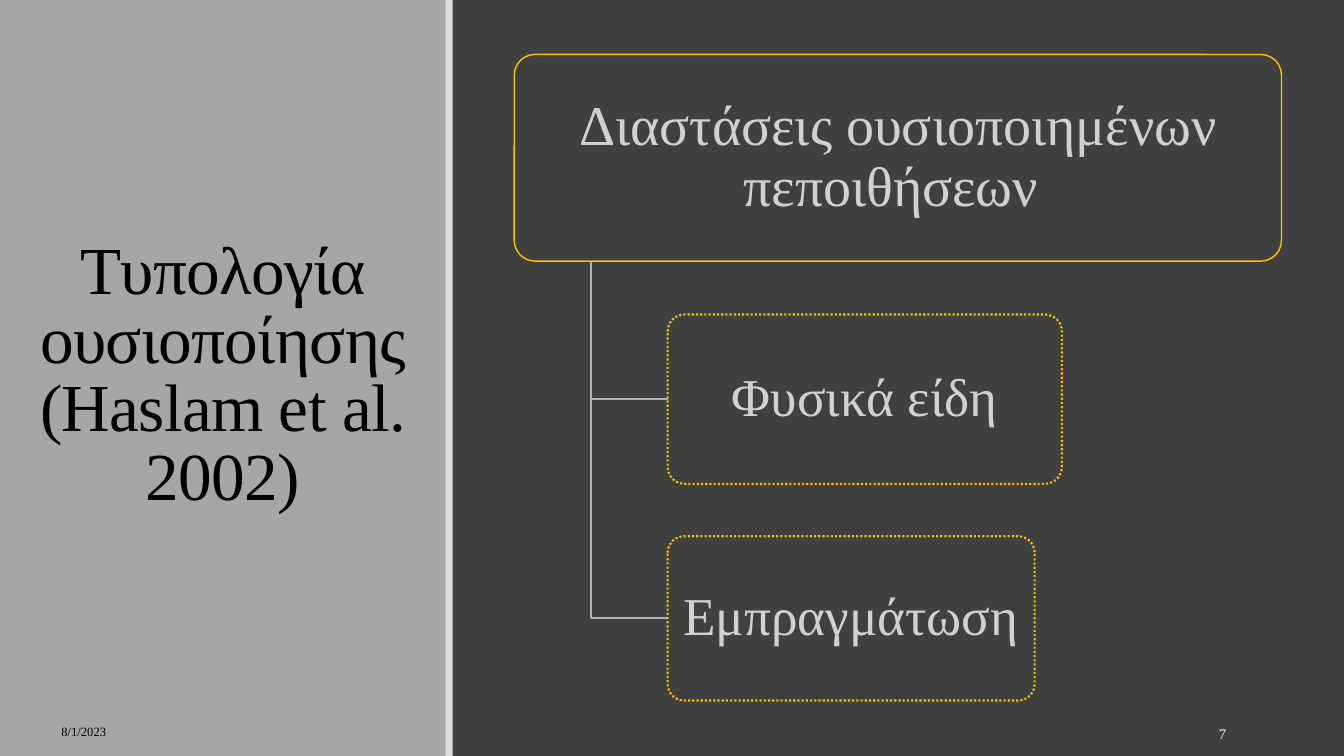
from lxml.etree import SubElement
from pptx import Presentation
from pptx.dml.color import RGBColor as Color
from pptx.enum.dml import MSO_LINE as Dash
from pptx.enum.shapes import MSO_SHAPE as Kind
from pptx.enum.text import MSO_ANCHOR as Anchor, MSO_AUTO_SIZE as Fit, PP_ALIGN as Align
from pptx.oxml.ns import qn
from pptx.util import Inches, Pt

TITLE = "Τυπολογία ουσιοποίησης (Haslam et al. 2002)"
TITLE_BOX = (0.15, 0.65, 4.12, 4.5)
PANELS = [  # box, colour
    ((0, 0, 4.43, 7.5), "panel"),
    ((4.42, 0, 0.07, 7.5), "strip"),
]
ROOT = ("Διαστάσεις ουσιοποιημένων πεποιθήσεων ", (5.1, 0.54, 7.61, 2.05))
LEAVES = [  # text, top, width, height
    ("Φυσικά είδη", 3.12, 3.91, 1.68),
    ("Εμπραγμάτωση", 5.32, 3.64, 1.63),
]
FOOTERS = [  # text, box, alignment, style
    ("8/1/2023", (0.51, 7.06, 2.86, 0.4), Align.LEFT, "date"),
    ("7", (10.83, 7.08, 1.43, 0.4), Align.RIGHT, "page"),
]
THEME = {
    "font": "Times New Roman",
    "back": "404040", "panel": "A6A6A6", "strip": "DDDDDD",
    "frame": "FFC000", "branch": "B1B1B1",
    "title": (48, "000000"), "root": (40, "D1D1D1"), "leaf": (38, "D1D1D1"),
    "date": (9, "000000"), "page": (10.5, "F8F8F8"),
}


def tint(name):
    return Color.from_string(THEME[name])


def apply(target, values):
    for name, value in values.items():
        setattr(target, name, value)


def write(shape, text, style, align=Align.CENTER, anchor=Anchor.MIDDLE,
          spacing=None, pad=(0.1, 0.05)):
    """Fill a shape with one styled paragraph; pad is (side, top) in inches."""
    side, top = map(Inches, pad)
    frame = shape.text_frame
    apply(frame, dict(word_wrap=True, auto_size=Fit.NONE, vertical_anchor=anchor,
                      margin_left=side, margin_right=side,
                      margin_top=top, margin_bottom=top))
    para = frame.paragraphs[0]
    apply(para, dict(alignment=align, line_spacing=spacing))
    run = para.add_run()
    run.text = text
    size, colour = THEME[style]
    apply(run.font, dict(name=THEME["font"], size=Pt(size), bold=False))
    run.font.color.rgb = Color.from_string(colour)
    return run


def add_panel(slide, box, colour):
    """Place a plain block behind everything else on the slide."""
    panel = slide.shapes.add_shape(Kind.RECTANGLE, *map(Inches, box))
    panel.shadow.inherit = False
    panel.fill.solid()
    panel.fill.fore_color.rgb = tint(colour)
    panel.line.fill.background()
    slide.shapes._spTree.insert(2, panel._element)


def add_node(slide, text, box, style, width, dash=None, pad=0.05):
    node = slide.shapes.add_shape(Kind.ROUNDED_RECTANGLE, *map(Inches, box))
    node.adjustments[0] = 0.1
    node.shadow.inherit = False
    node.fill.background()
    node.line.color.rgb = tint("frame")
    apply(node.line, dict(width=Pt(width), dash_style=dash))
    write(node, text, style, spacing=0.9, pad=(0.08, pad))


def add_branch(slide, x, y, end_x, end_y):
    """Draw a line down from (x, y), then across to (end_x, end_y)."""
    path = slide.shapes.build_freeform(Inches(x), Inches(y), scale=1.0)
    corners = [(x, end_y), (end_x, end_y)]
    path.add_line_segments([(Inches(a), Inches(b)) for a, b in corners], close=False)
    branch = path.convert_to_shape()
    branch.shadow.inherit = False
    branch.fill.background()
    branch.line.color.rgb = tint("branch")
    branch.line.width = Pt(1.25)


def main():
    deck = Presentation()
    apply(deck, dict(slide_width=Inches(13.33), slide_height=Inches(7.5)))
    slide = deck.slides.add_slide(deck.slide_layouts[5])
    slide.background.fill.solid()
    slide.background.fill.fore_color.rgb = tint("back")

    for box, colour in reversed(PANELS):
        add_panel(slide, box, colour)

    title = slide.shapes.title
    apply(title, dict(zip(("left", "top", "width", "height"), map(Inches, TITLE_BOX))))
    run = write(title, TITLE, "title", anchor=Anchor.BOTTOM, spacing=0.85)
    run._r.get_or_add_rPr().set("spc", "-50")

    text, box = ROOT
    left, top, width, height = box
    add_node(slide, text, box, "root", 1, pad=0.06)
    stem, indent = left + width / 10, left + width / 5
    for text, y, wide, high in LEAVES:
        add_branch(slide, stem, top + height, indent, y + high / 2)
        add_node(slide, text, (indent, y, wide, high), "leaf", 1.5, Dash.ROUND_DOT)

    for text, box, align, style in FOOTERS:
        write(slide.shapes.add_textbox(*map(Inches, box)), text, style, align)

    deck.save("out.pptx")


if __name__ == "__main__":
    main()
